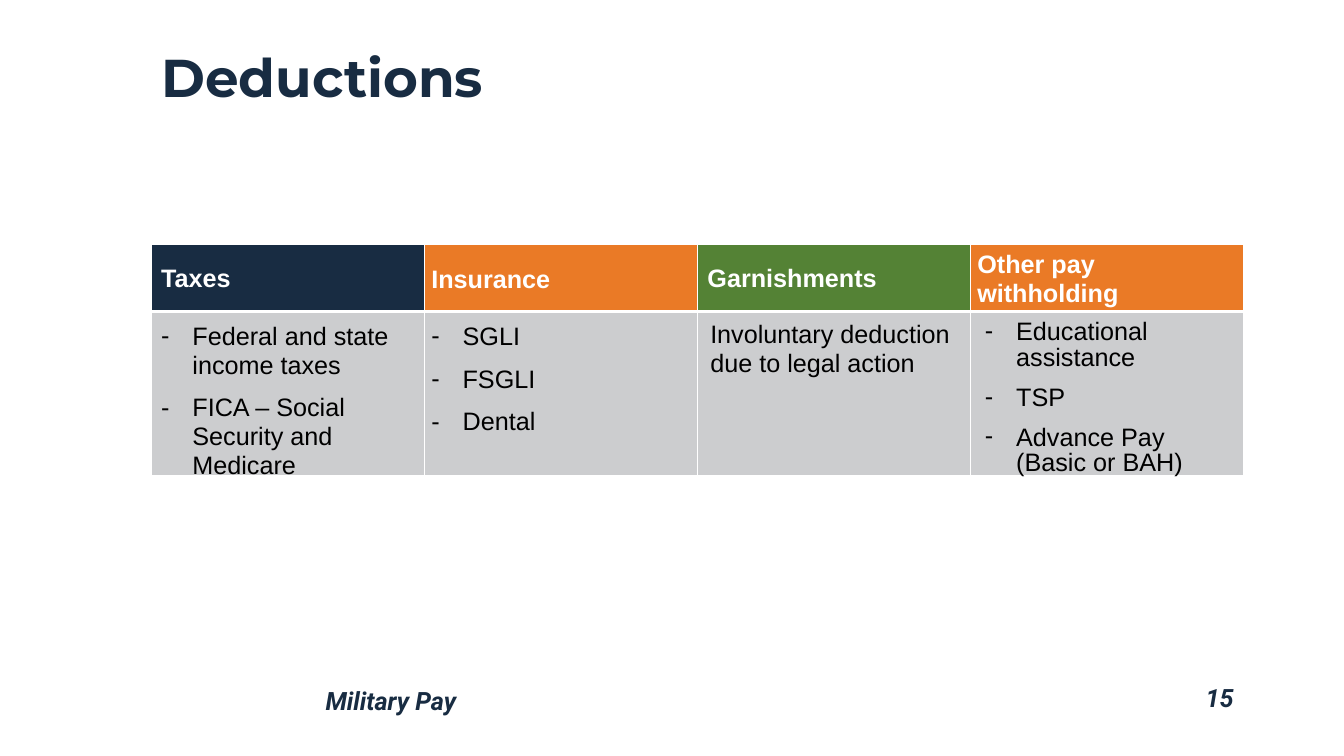
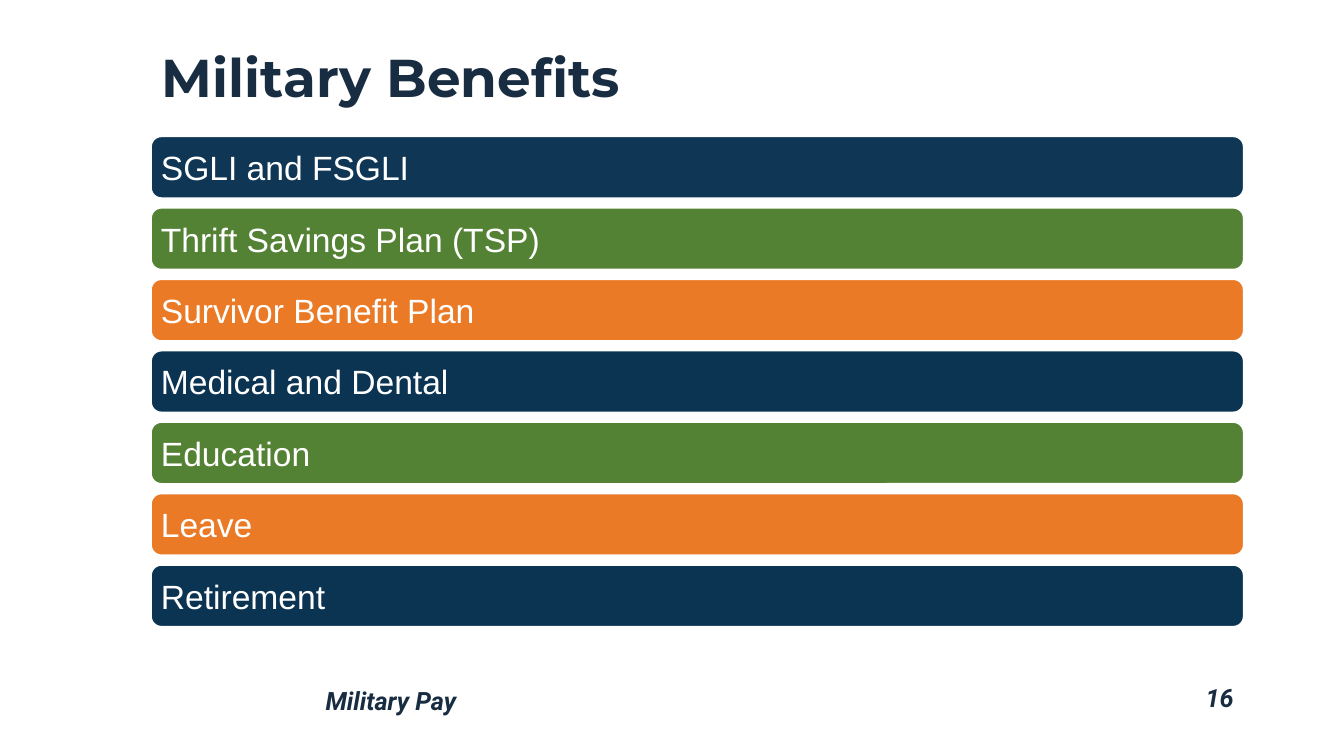
"""Build two slides on military pay: deductions and benefits."""
from dataclasses import dataclass

from lxml import etree
from pptx import Presentation
from pptx import util as u
from pptx.dml.color import RGBColor
from pptx.enum import shapes, text
from pptx.oxml.ns import qn


@dataclass(frozen=True)
class Theme:
    """Colours, fonts and type sizes shared by the slides."""
    ink: str = "182C42"
    navy: str = "0B3352"
    lead_navy: str = "0F3655"
    green: str = "548235"
    orange: str = "EA7A26"
    grey: str = "CCCDCF"
    white: str = "FFFFFF"
    black: str = "000000"
    title_font: str = "Montserrat"
    footer_font: str = "Roboto"
    body_font: str = "Arial"
    title_size: int = 38
    bar_size: int = 24
    body_size: int = 18


THEME = Theme()
LEFT, WIDTH = 3.81, 27.53
HANGING = 0.79
TOP, MIDDLE = text.MSO_ANCHOR.TOP, text.MSO_ANCHOR.MIDDLE

DEDUCTIONS = [
    dict(heading="Taxes", color=THEME.ink, heading_box=(3.81, 6.55, 6.81, 1.19), anchor=TOP,
         items=["Federal and state income taxes", "FICA – Social Security and Medicare"],
         items_box=(3.81, 8, 6.81, 3.43)),
    dict(heading="Insurance", color=THEME.orange, heading_box=(10.62, 6.25, 6.88, 1.63),
         anchor=MIDDLE, items=["SGLI", "FSGLI", "Dental"], items_box=(10.62, 8, 6.88, 2.82)),
    dict(heading="Garnishments", color=THEME.green, heading_box=(17.58, 6.05, 6.73, 1.98),
         anchor=MIDDLE, items=["Involuntary deduction due to legal action"],
         items_box=(17.65, 7.95, 6.65, 2.82), bullet=None),
    dict(heading="Other pay withholding", color=THEME.orange,
         heading_box=(24.38, 6.2, 6.88, 1.32), anchor=TOP,
         items=["Educational assistance", "TSP", "Advance Pay (Basic or BAH)"],
         items_box=(24.57, 7.95, 6.68, 4.11), spacing=0.85),
]

BENEFITS = [
    ("SGLI and FSGLI", THEME.lead_navy),
    ("Thrift Savings Plan (TSP)", THEME.green),
    ("Survivor Benefit Plan", THEME.orange),
    ("Medical and Dental", THEME.navy),
    ("Education", THEME.green),
    ("Leave", THEME.orange),
    ("Retirement", THEME.navy),
]


def paint(fill, color):
    """Give a fill one solid colour."""
    fill.solid()
    fill.fore_color.rgb = RGBColor.from_string(color)


def add_bullet(paragraph, mark):
    """Give a paragraph a hanging bullet."""
    properties = paragraph._p.get_or_add_pPr()
    properties.set("marL", str(u.Cm(HANGING)))
    properties.set("indent", str(-u.Cm(HANGING)))
    etree.SubElement(properties, qn("a:buFont")).set("typeface", THEME.body_font)
    etree.SubElement(properties, qn("a:buChar")).set("char", mark)


def write(frame, *lines, size=THEME.body_size, color=THEME.black, font=THEME.body_font,
          bold=False, italic=False, align=text.PP_ALIGN.LEFT, anchor=TOP, spacing=0.9,
          bullet=None):
    """Write lines as formatted paragraphs of a text frame."""
    frame.word_wrap = True
    frame.vertical_anchor = anchor
    for index, line in enumerate(lines):
        paragraph = frame.add_paragraph() if index else frame.paragraphs[0]
        if bullet:
            add_bullet(paragraph, bullet)
        paragraph.alignment = align
        paragraph.line_spacing = spacing
        paragraph.space_before = u.Pt(10 if index else 0)
        run = paragraph.add_run()
        run.text = line
        run.font.name = font
        run.font.size = u.Pt(size)
        run.font.bold = bold
        run.font.italic = italic
        run.font.color.rgb = RGBColor.from_string(color)


def place(shape, left, top, width, height):
    """Move and size a shape, in centimetres."""
    shape.left, shape.top = u.Cm(left), u.Cm(top)
    shape.width, shape.height = u.Cm(width), u.Cm(height)


def add_text(slide, box, *lines, **style):
    """Add a text box at a place given in centimetres."""
    label = slide.shapes.add_textbox(*map(u.Cm, box))
    write(label.text_frame, *lines, **style)


def add_page(deck, title, number):
    """Add a slide with its title, footer and page number."""
    slide = deck.slides.add_slide(deck.slide_layouts[0])
    heading, footer = slide.placeholders
    place(heading, LEFT, 0.28, WIDTH, 2.59)
    write(heading.text_frame, title, size=THEME.title_size, color=THEME.ink,
          font=THEME.title_font, bold=True, anchor=text.MSO_ANCHOR.BOTTOM)

    footer_style = dict(color=THEME.ink, font=THEME.footer_font, bold=True, italic=True)
    place(footer, 7.95, 17.22, 19.38, 0.97)
    write(footer.text_frame, "Military Pay", **footer_style)
    add_text(slide, (27.33, 17.15, 4.01, 0.97), str(number), align=text.PP_ALIGN.RIGHT,
             **footer_style)
    return slide


def rule_cell(cell, side):
    """Draw a thick white border on one side of a table cell."""
    border = etree.Element(qn(f"a:{side}"), w=str(u.Pt(3)))
    fill = etree.SubElement(border, qn("a:solidFill"))
    etree.SubElement(fill, qn("a:srgbClr")).set("val", THEME.white)
    cell._tc.get_or_add_tcPr().insert(0, border)


def add_deductions(slide):
    """Add the coloured table and the text of each kind of deduction."""
    frame = slide.shapes.add_table(2, len(DEDUCTIONS), u.Cm(LEFT), u.Cm(6.17),
                                   u.Cm(WIDTH), u.Cm(5.82))
    table = frame.table
    table.rows[0].height, table.rows[1].height = u.Cm(1.68), u.Cm(4.14)
    for column, kind in enumerate(DEDUCTIONS):
        rows = ((kind["color"], "lnB"), (THEME.grey, "lnT"))
        for row, (color, side) in enumerate(rows):
            cell = table.cell(row, column)
            paint(cell.fill, color)
            rule_cell(cell, side)
        add_text(slide, kind["heading_box"], kind["heading"], color=THEME.white, bold=True,
                 anchor=kind["anchor"], spacing=0.95)
        add_text(slide, kind["items_box"], *kind["items"], bullet=kind.get("bullet", "-"),
                 spacing=kind.get("spacing", 0.95))


def add_benefits(slide):
    """Add the stack of benefit bars at equal steps."""
    first_top, step, height = 3.44, 1.8, 1.55
    for index, (benefit, color) in enumerate(BENEFITS):
        bar = slide.shapes.add_shape(shapes.MSO_SHAPE.ROUNDED_RECTANGLE, u.Cm(LEFT),
                                     u.Cm(first_top + index * step), u.Cm(WIDTH), u.Cm(height))
        bar.shadow.inherit = False
        paint(bar.fill, color)
        paint(bar.line.fill, THEME.white)
        bar.line.width = u.Pt(1)
        bar.text_frame.margin_left = u.Cm(0.17)
        write(bar.text_frame, benefit, size=THEME.bar_size, color=THEME.white,
              anchor=MIDDLE, spacing=1.0)


def main():
    """Build and save the presentation."""
    deck = Presentation()
    deck.slide_width, deck.slide_height = u.Cm(33.87), u.Cm(19.05)
    add_deductions(add_page(deck, "Deductions", 15))
    add_benefits(add_page(deck, "Military Benefits", 16))
    deck.save("out.pptx")


if __name__ == "__main__":
    main()
